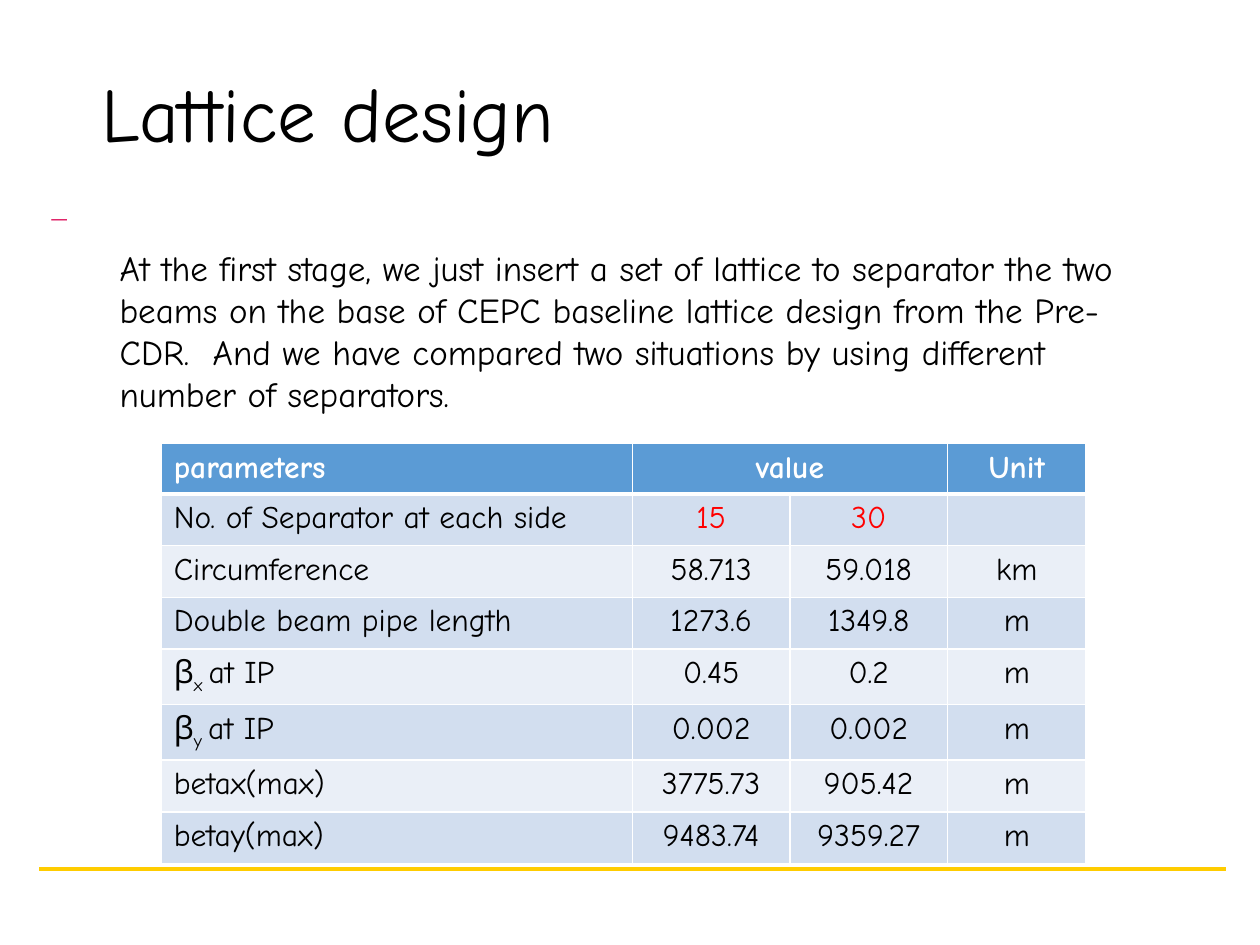
from lxml import etree
from pptx import Presentation
from pptx.dml.color import RGBColor
from pptx.enum import shapes, text
from pptx.oxml.ns import qn
from pptx.util import Inches, Pt

FONT = "Comic Neue"
BLUE, BANDS = "5B9BD5", ("D2DEEF", "EAEFF7")
BLACK, WHITE, RED, PINK, GOLD = "000000", "FFFFFF", "FF0000", "E0266A", "FFCC00"
COLS = (3.74, 1.25, 1.25, 1.1)
HEAD = ("parameters", "value", "", "Unit")
ROWS = (
    ("No. of Separator at each side", "15", "30", ""),
    ("Circumference", "58.713", "59.018", "km"),
    ("Double beam pipe length", "1273.6", "1349.8", "m"),
    (("β", "x ", "at IP"), "0.45", "0.2", "m"),
    (("β", "y ", "at IP"), "0.002", "0.002", "m"),
    ("betax(max)", "3775.73", "905.42", "m"),
    ("betay(max)", "9483.74", "9359.27", "m"),
)
BODY = ("At the first stage, we just insert a set of lattice to separator the two "
        "beams on the base of CEPC baseline lattice design from the Pre-CDR.  And we "
        "have compared two situations by using different number of separators.")


def color(code):
    return RGBColor.from_string(code)


def write(frame, words, size=18, font=FONT, ink=BLACK, bold=False,
          align=text.PP_ALIGN.LEFT, space=None):
    """Fill a frame; in a tuple of parts, every second one is a subscript."""
    para = frame.paragraphs[0]
    para.alignment = align
    if space:
        para.line_spacing = space
    para.font.size = Pt(size)
    for i, part in enumerate((words,) if isinstance(words, str) else words):
        if not part:
            continue
        run = para.add_run()
        run.text = part
        run.font.size, run.font.name, run.font.bold = Pt(size), font, bold
        run.font.color.rgb = color(ink)
        if i % 2:
            run.font._element.set("baseline", "-25000")


def border(cell, side, width):
    props = cell._tc.get_or_add_tcPr()
    line = etree.SubElement(props, qn("a:" + side), w=str(Pt(width)))
    fill = etree.SubElement(line, qn("a:solidFill"))
    etree.SubElement(fill, qn("a:srgbClr"), val=WHITE)


class Page:
    def __init__(self, deck):
        self.shapes = deck.slides.add_slide(deck.slide_layouts[6]).shapes

    def label(self, box, words, wrap=True, anchor=text.MSO_ANCHOR.TOP, **style):
        frame = self.shapes.add_textbox(*map(Inches, box)).text_frame
        frame.word_wrap = wrap
        frame.vertical_anchor = anchor
        write(frame, words, **style)

    def line(self, start, end, ink, width):
        rule = self.shapes.add_connector(
            shapes.MSO_CONNECTOR.STRAIGHT, *map(Inches, start + end))
        rule.line.color.rgb = color(ink)
        rule.line.width = Pt(width)
        etree.SubElement(rule._element.spPr, qn("a:effectLst"))

    def table(self, left, top, head, rows):
        high = [0.26] + [0.41] * len(rows)
        grid = self.shapes.add_table(
            len(high), len(COLS),
            *map(Inches, (left, top, sum(COLS), sum(high)))).table
        for col, width in zip(grid.columns, COLS):
            col.width = Inches(width)
        for r, values in enumerate((head,) + rows):
            grid.rows[r].height = Inches(high[r])
            for c, words in enumerate(values):
                self.cell(grid.cell(r, c), r, c, words)
        grid.cell(0, 1).merge(grid.cell(0, 2))

    def cell(self, cell, r, c, words):
        top = r == 0
        ink = WHITE if top else RED if r == 1 and c else BLACK
        align = text.PP_ALIGN.CENTER if c else text.PP_ALIGN.LEFT
        write(cell.text_frame, words, ink=ink, bold=top, align=align)
        for side in ("lnL", "lnR", "lnT", "lnB"):
            thick = (top and side == "lnB") or (r == 1 and side == "lnT")
            border(cell, side, 3 if thick else 1)
        cell.fill.solid()
        cell.fill.fore_color.rgb = color(BLUE if top else BANDS[(r - 1) % 2])


def main():
    deck = Presentation()
    deck.slide_width, deck.slide_height = Inches(10), Inches(7.5)
    page = Page(deck)
    page.label((0.71, 0.21, 8.62, 1.45), "Lattice design", size=44, space=0.9,
               anchor=text.MSO_ANCHOR.MIDDLE)
    page.label((0.31, 1.46, 9.42, 0.08), "_", wrap=False, font="Montserrat", ink=PINK)
    page.line((0.31, 6.9), (9.73, 6.9), GOLD, 2.25)
    page.table(1.28, 3.52, HEAD, ROWS)
    page.label((0.85, 1.91, 8.48, 1.45), BODY, size=20)
    deck.save("out.pptx")


if __name__ == "__main__":
    main()
